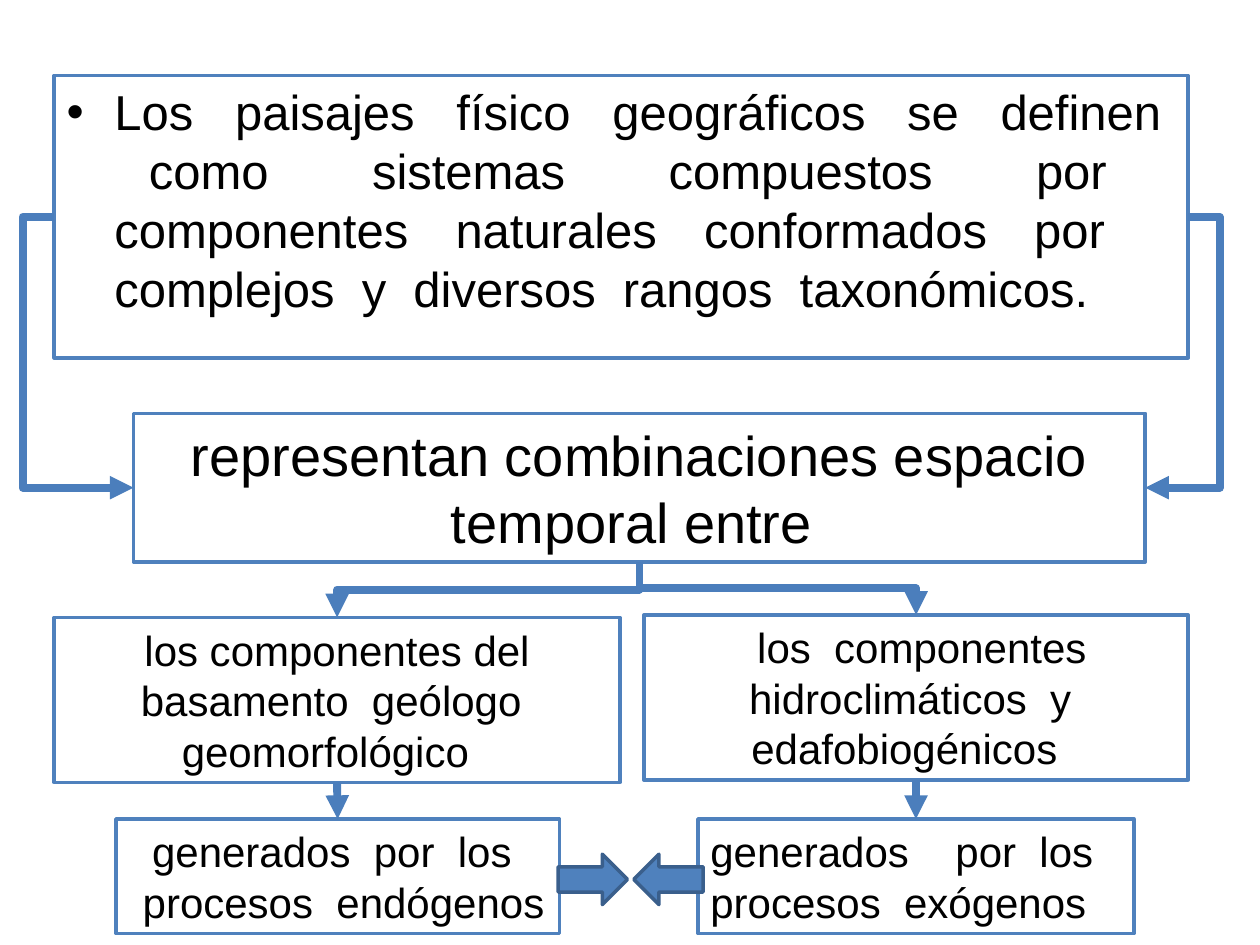
from collections import namedtuple
from dataclasses import dataclass

from lxml.etree import SubElement
from pptx import Presentation
from pptx.dml.color import RGBColor
from pptx.enum.shapes import MSO_CONNECTOR, MSO_SHAPE
from pptx.enum.text import MSO_ANCHOR, PP_ALIGN
from pptx.oxml.ns import qn
from pptx.util import Emu, Pt

Box = namedtuple("Box", "x y w h")


@dataclass(frozen=True)
class Theme:
    font: str = "Arial"
    text: str = "000000"
    paper: str = "FFFFFF"
    blue: str = "4F81BD"
    connector: str = "4B7EBC"
    arrow_edge: str = "3A5F8C"
    definition: int = 28
    heading: int = 32
    body: int = 24
    edge: float = 2
    link: float = 4.5


T = Theme()


def px(n):
    """100 px to the inch."""
    return Emu(int(n * 9144))


def rgb(code):
    return RGBColor.from_string(code)


def block(s, box, kind=MSO_SHAPE.RECTANGLE, fill=T.paper, line=T.blue):
    sp = s.shapes.add_shape(kind, *map(px, box))
    sp.shadow.inherit = False
    sp.fill.solid()
    sp.fill.fore_color.rgb = rgb(fill)
    sp.line.color.rgb = rgb(line)
    sp.line.width = Pt(T.edge)
    return sp


def write(sp, lines, size, align=PP_ALIGN.CENTER, wrap=True):
    tf = sp.text_frame
    tf.word_wrap = wrap
    tf.vertical_anchor = MSO_ANCHOR.MIDDLE
    for i, line in enumerate(lines):
        p = tf.paragraphs[0] if i == 0 else tf.add_paragraph()
        p.alignment = align
        r = p.add_run()
        r.text = line
        r.font.name = T.font
        r.font.size = Pt(size)
        r.font.color.rgb = rgb(T.text)
    return tf


def connect(s, kind, x1, y1, x2, y2):
    cxn = s.shapes.add_connector(kind, px(x1), px(y1), px(x2), px(y2))
    cxn.line.color.rgb = rgb(T.connector)
    cxn.line.width = Pt(T.link)
    SubElement(cxn.line._get_or_add_ln(), qn("a:tailEnd"), type="triangle")
    SubElement(cxn._element.spPr, qn("a:effectLst"))
    return cxn


def side_elbow(s, start, end, via_x):
    """Leaves and arrives sideways, passing along x = via_x."""
    cxn = connect(s, MSO_CONNECTOR.ELBOW, *start, *end)
    bend = round(100000 * (via_x - start[0]) / (end[0] - start[0]))
    av = cxn._element.spPr.find(qn("a:prstGeom")).get_or_add_avLst()
    SubElement(av, qn("a:gd"), name="adj1", fmla=f"val {bend}")


def drop_elbow(s, start, end):
    """Leaves and arrives downwards: a sideways elbow turned on its centre."""
    (x1, y1), (x2, y2) = start, end
    cx, cy = (x1 + x2) / 2, (y1 + y2) / 2
    half_w, half_h = (y2 - y1) / 2, abs(x2 - x1) / 2
    sign, turn = (1, 270) if x2 > x1 else (-1, 90)
    cxn = connect(s, MSO_CONNECTOR.ELBOW, cx + sign * half_w, cy - half_h,
                  cx - sign * half_w, cy + half_h)
    cxn._element.spPr.find(qn("a:xfrm")).set("rot", str(turn * 60000))


def definition(s, box):
    """Bulleted definition of the landscapes."""
    sp = block(s, box)
    tf = write(sp, ["Los   paisajes   físico   geográficos   se   definen   como   "
                    "sistemas   compuestos   por   componentes  naturales  "
                    "conformados  por    complejos  y  diversos  rangos  "
                    "taxonómicos."], T.definition, PP_ALIGN.JUSTIFY)
    tf.vertical_anchor = MSO_ANCHOR.TOP
    p = tf.paragraphs[0]
    p.space_before = Pt(T.definition * 0.2)
    pPr = p._p.get_or_add_pPr()
    pPr.set("marL", str(px(38)))
    pPr.set("indent", str(px(-38)))
    SubElement(pPr, qn("a:buFont"), typeface=T.font)
    SubElement(pPr, qn("a:buChar"), char="•")


def combination(s, box, source):
    """Central statement, reached from both sides of the definition."""
    y1, y2 = source.y + source.h / 2, box.y + box.h / 2
    right = source.x + source.w
    side_elbow(s, (right, y1), (box.x + box.w, y2), right + 25)
    side_elbow(s, (source.x, y1), (box.x, y2), source.x - 25)
    write(block(s, box), ["representan combinaciones espacio temporal entre "],
          T.heading)


def branch(s, box, parent, component, process_box, process, align):
    """Component box with the process that generates it below."""
    drop_elbow(s, (parent.x + parent.w / 2, parent.y + parent.h),
               (box.x + box.w / 2, box.y))
    top = block(s, box)
    write(top, [component], T.body)
    x, y, w, h = process_box
    low = block(s, Box(box.x + x, box.y + y, w, h))
    write(low, process, T.body, align, wrap=False)
    cxn = connect(s, MSO_CONNECTOR.STRAIGHT, 0, 0, 1, 1)
    cxn.begin_connect(top, 2)
    cxn.end_connect(low, 0)


def meeting_arrows(s, box):
    """Two block arrows pointing at each other."""
    w = 55
    for x, kind in ((box.x, MSO_SHAPE.RIGHT_ARROW),
                    (box.x + box.w - w, MSO_SHAPE.LEFT_ARROW)):
        block(s, Box(x, box.y, w, box.h), kind, T.blue, T.arrow_edge)


def main():
    prs = Presentation()
    prs.slide_width, prs.slide_height = px(1000), px(750)
    s = prs.slides.add_slide(prs.slide_layouts[6])

    definition_box = Box(43, 60, 900, 224)
    combination_box = Box(106, 328, 803, 118)
    definition(s, definition_box)
    combination(s, combination_box, definition_box)
    branch(s, Box(43, 490, 449, 131), combination_box,
           "los componentes del basamento  geólogo  geomorfológico  ",
           Box(49, 160, 352, 91),
           ["generados  por  los ", " procesos  endógenos"], PP_ALIGN.CENTER)
    branch(s, Box(511, 488, 432, 131), combination_box,
           " los  componentes hidroclimáticos  y  edafobiogénicos  ",
           Box(43, 162, 346, 91),
           ["generados    por  los", "procesos  exógenos"], PP_ALIGN.LEFT)
    meeting_arrows(s, Box(443, 678, 115, 40))
    prs.save("out.pptx")


if __name__ == "__main__":
    main()
